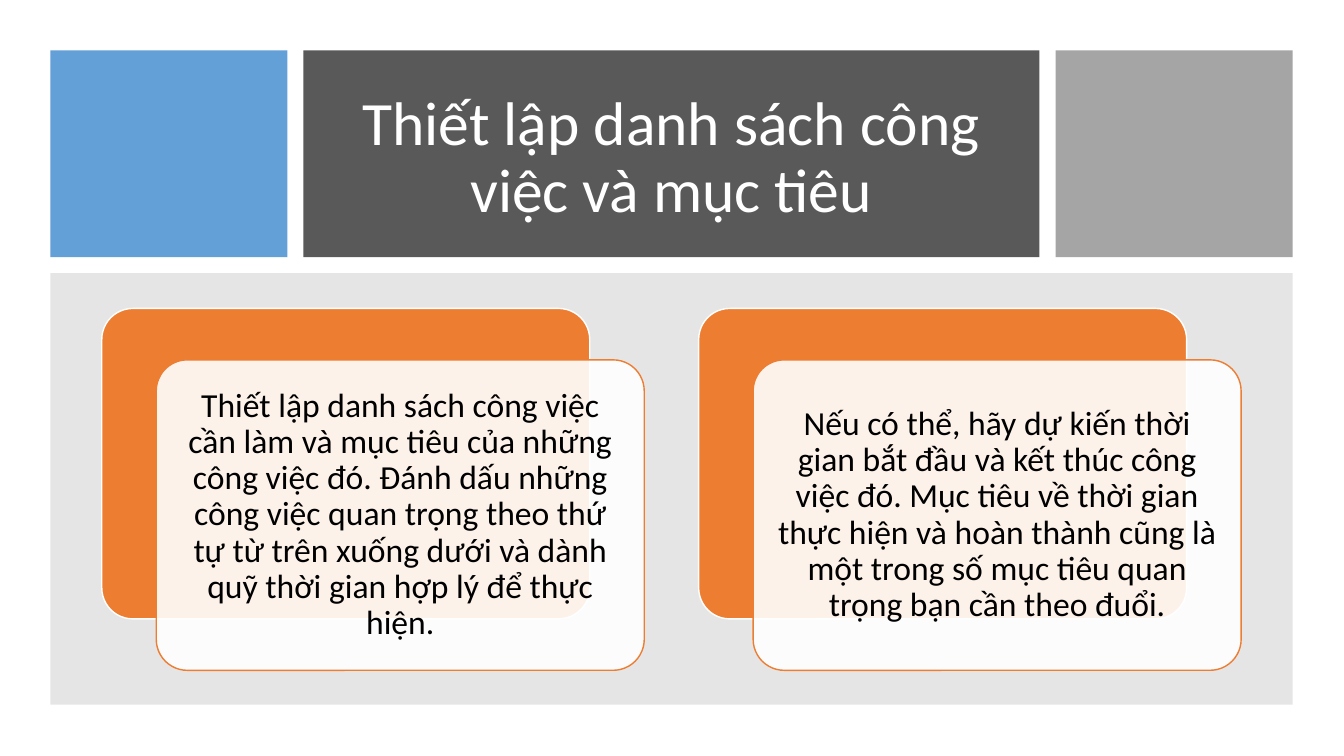
import pptx
import pptx.util
import pptx.dml.color
import pptx.enum.shapes
import pptx.enum.text
import pptx.oxml.ns
import lxml.etree

Inches = pptx.util.Inches
Pt = pptx.util.Pt
RGBColor = pptx.dml.color.RGBColor
SHAPE = pptx.enum.shapes.MSO_SHAPE

BLUE = RGBColor(0x5B, 0x9B, 0xD5)
DARK = RGBColor(0x59, 0x59, 0x59)
SILVER = RGBColor(0xA5, 0xA5, 0xA5)
GRAY = RGBColor(0x80, 0x80, 0x80)
ORANGE = RGBColor(0xED, 0x7D, 0x31)
WHITE = RGBColor(0xFF, 0xFF, 0xFF)
BLACK = RGBColor(0, 0, 0)

FONT = "Calibri"
TITLE = "Thiết lập danh sách công việc và mục tiêu"
CARDS = [
    "Thiết lập danh sách công việc cần làm và mục tiêu của những công việc đó. "
    "Đánh dấu những công việc quan trọng theo thứ tự từ trên xuống dưới và dành "
    "quỹ thời gian hợp lý để thực hiện.",
    "Nếu có thể, hãy dự kiến thời gian bắt đầu và kết thúc công việc đó. "
    "Mục tiêu về thời gian thực hiện và hoàn thành cũng là một trong số mục tiêu "
    "quan trọng bạn cần theo đuổi.",
]
CARD_LEFT, CARD_TOP, CARD_STEP = 1.01, 3.06, 5.92
CARD_W, CARD_H = 4.84, 3.08
SHIFT_X, SHIFT_Y = 0.54, 0.51
INSET = 0.09


def add_box(shapes, kind, box, color, alpha=100, line=None):
    """Add a filled shape; alpha is its opacity in percent."""
    shape = shapes.add_shape(kind, *map(Inches, box))
    shape.shadow.inherit = False
    shape.fill.solid()
    shape.fill.fore_color.rgb = color
    if alpha < 100:
        tag = pptx.oxml.ns.qn("a:srgbClr")
        node = next(shape.fill._xPr.iter(tag))
        mark = lxml.etree.SubElement(node, pptx.oxml.ns.qn("a:alpha"))
        mark.set("val", str(alpha * 1000))
    if line is None:
        shape.line.fill.background()
    else:
        shape.line.color.rgb = line
        shape.line.width = Pt(1)
    return shape


def write(frame, text, size, color):
    frame.word_wrap = True
    frame.auto_size = pptx.enum.text.MSO_AUTO_SIZE.NONE
    frame.vertical_anchor = pptx.enum.text.MSO_ANCHOR.MIDDLE
    para = frame.paragraphs[0]
    para.alignment = pptx.enum.text.PP_ALIGN.CENTER
    para.line_spacing = 0.9
    run = para.add_run()
    run.text = text
    run.font.name = FONT
    run.font.size = Pt(size)
    run.font.color.rgb = color


def add_title(slide, panel):
    """Fill the title and stack it just above its panel."""
    title = slide.shapes.title
    title.left, title.top = Inches(3.33), Inches(0.8)
    title.width, title.height = Inches(6.66), Inches(1.56)
    write(title.text_frame, TITLE, 44, WHITE)
    panel.element.addnext(title.element)


def add_card(shapes, left, text):
    top = CARD_TOP
    add_box(shapes, SHAPE.ROUNDED_RECTANGLE, (left, top, CARD_W, CARD_H),
            ORANGE, line=WHITE).adjustments[0] = 0.1
    left, top = left + SHIFT_X, top + SHIFT_Y
    add_box(shapes, SHAPE.ROUNDED_RECTANGLE, (left, top, CARD_W, CARD_H),
            WHITE, 90, ORANGE).adjustments[0] = 0.1
    label = shapes.add_textbox(
        Inches(left + INSET), Inches(top + INSET),
        Inches(CARD_W - 2 * INSET), Inches(CARD_H - 2 * INSET))
    frame = label.text_frame
    frame.margin_left = frame.margin_right = Inches(0.1)
    frame.margin_top = frame.margin_bottom = Inches(0.1)
    write(frame, text, 24, BLACK)


def main():
    deck = pptx.Presentation()
    deck.slide_width, deck.slide_height = Inches(13.33), Inches(7.5)
    slide = deck.slides.add_slide(deck.slide_layouts[5])
    shapes = slide.shapes

    add_box(shapes, SHAPE.RECTANGLE, (0.5, 0.5, 2.35, 2.05), BLUE, 95)
    panel = add_box(shapes, SHAPE.RECTANGLE, (3.01, 0.5, 7.3, 2.05), DARK)
    add_title(slide, panel)
    add_box(shapes, SHAPE.RECTANGLE, (10.47, 0.5, 2.35, 2.05), SILVER)
    add_box(shapes, SHAPE.RECTANGLE, (0.5, 2.71, 12.32, 4.28), GRAY, 20)

    group = shapes.add_group_shape()
    for i, text in enumerate(CARDS):
        add_card(group.shapes, CARD_LEFT + i * CARD_STEP, text)

    deck.save("out.pptx")


if __name__ == "__main__":
    main()
